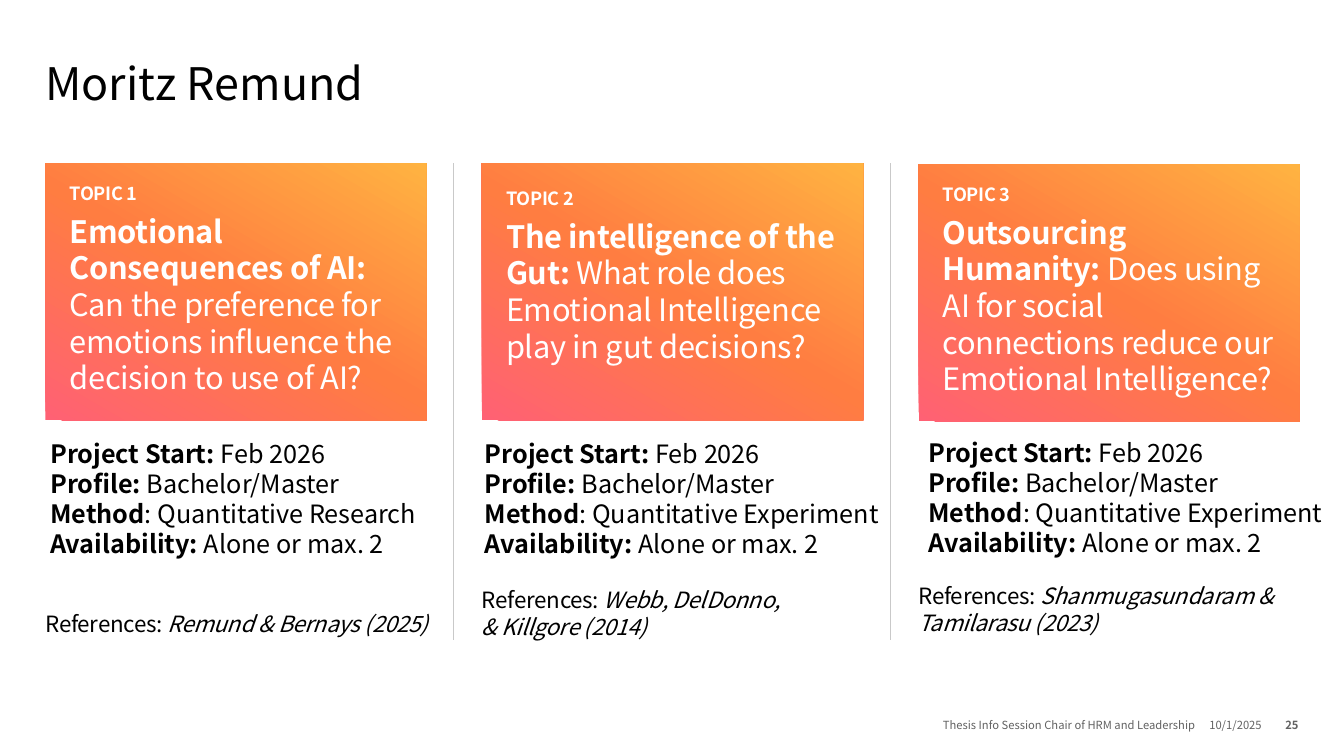
import copy
import pptx
import pptx.dml.color
import pptx.enum.shapes
import pptx.enum.text
import pptx.util
import lxml.etree

IN, PT = pptx.util.Inches, pptx.util.Pt
ALIGN, ANCHOR = pptx.enum.text.PP_ALIGN, pptx.enum.text.MSO_ANCHOR
FONT = "Noto Sans CJK KR"
WHITE, BLACK, GREY, RULE = "FFFFFF", "000000", "626262", "C9C9C9"
GRADIENT = [(0, "FF6174"), (0.5, "FF7D41"), (1, "FFB341")]

TITLE = "Moritz Remund"
FOOTER = [  # text, left, width, alignment, bold
    ("Thesis Info Session Chair of HRM and Leadership", 7.53, 4.33, ALIGN.RIGHT, False),
    ("10/1/2025", 11.94, 0.63, ALIGN.CENTER, False),
    ("25", 12.57, 0.31, ALIGN.RIGHT, True),
]
TOPICS = [
    {"name": "Emotional Consequences of AI: ",
     "question": "Can the preference for emotions influence the decision to use of AI?",
     "method": "Quantitative Research", "source": "Remund & Bernays (2025)",
     "anchor": ANCHOR.BOTTOM, "card_top": 1.62, "details_at": (0.4, 4.3), "source_top": 6.06},
    {"name": "The intelligence of the Gut: ",
     "question": "What role does Emotional Intelligence play in gut decisions?",
     "method": "Quantitative Experiment", "source": "Webb, DelDonno, \v& Killgore (2014)",
     "anchor": ANCHOR.TOP, "card_top": 1.62, "details_at": (4.71, 4.3), "source_top": 5.82},
    {"name": "Outsourcing Humanity: ",
     "question": "Does using AI for social connections reduce our Emotional Intelligence?",
     "method": "Quantitative Experiment", "source": "Shanmugasundaram & \vTamilarasu (2023)",
     "anchor": ANCHOR.BOTTOM, "card_top": 1.63, "details_at": (9.11, 4.29), "source_top": 5.78},
]

LEFT, PITCH, TOP = 0.45, 4.33, 1.62
CARD_W, CARD_H, CARD_PAD = 3.78, 2.55, 0.24
TEXT_W = 4.11
DIVIDER_SHIFT, DIVIDER_END = 4.05, 6.35
LINE_RATIO = 1.19


def rgb(value):
    return pptx.dml.color.RGBColor.from_string(value)


def write(sp, paragraphs, pads=(0, 0, 0, 0), anchor=ANCHOR.TOP, align=ALIGN.LEFT,
          color=BLACK, after=0, spacing=0, ratio=LINE_RATIO):
    """Fill sp with paragraphs, each a (size, [(text, font values), ...]) pair."""
    tf = sp.text_frame
    tf.word_wrap, tf.vertical_anchor = True, anchor
    for side, pad in zip(("left", "top", "right", "bottom"), pads):
        setattr(tf, "margin_" + side, IN(pad))
    for i, (size, runs) in enumerate(paragraphs):
        p = tf.add_paragraph() if i else tf.paragraphs[0]
        p.alignment, p.space_after = align, PT(after)
        p.line_spacing = PT(round(size * ratio, 1))
        for text, style in runs:
            for j, line in enumerate(text.split("\v")):
                if j:
                    p.add_line_break()
                r = p.add_run()
                r.text = line
                r.font.color.rgb = rgb(color)
                for key, value in {"name": FONT, "size": PT(size), **style}.items():
                    setattr(r.font, key, value)
                if spacing:
                    r.font._element.set("spc", str(round(spacing * 100)))


def add_text(slide, at, paragraphs, **layout):
    sp = slide.shapes.add_textbox(*map(IN, at))
    write(sp, paragraphs, **layout)


def add_card(slide, at):
    sp = slide.shapes.add_shape(pptx.enum.shapes.MSO_SHAPE.RECTANGLE, *map(IN, at))
    sp.shadow.inherit = False
    sp.line.fill.background()
    sp.fill.gradient()
    sp.fill.gradient_angle = 60
    stops = sp._element.spPr.find(".//" + pptx.oxml.ns.qn("a:gsLst"))
    stops.append(copy.deepcopy(stops[0]))
    for stop, (position, color) in zip(sp.fill.gradient_stops, GRADIENT):
        stop.position, stop.color.rgb = position, rgb(color)
    return sp


def add_divider(slide, x):
    line = slide.shapes.add_connector(pptx.enum.shapes.MSO_CONNECTOR.STRAIGHT,
                                      IN(x), IN(TOP), IN(x), IN(DIVIDER_END))
    line.line.color.rgb, line.line.width = rgb(RULE), PT(0.5)
    lxml.etree.SubElement(line._element.spPr, pptx.oxml.ns.qn("a:effectLst"))


def add_topic(slide, index, topic):
    x = LEFT + index * PITCH
    bold, plain = {"bold": True}, {"bold": False}
    card = add_card(slide, (x, topic["card_top"], CARD_W, CARD_H))
    write(card, [(13, [(f"TOPIC {index + 1}", bold)]),
                 (22, [(topic["name"], bold), (topic["question"], plain)])],
          pads=(CARD_PAD,) * 4, anchor=topic["anchor"], color=WHITE, after=6, spacing=-0.2)
    details = [("Project Start: ", "Feb 2026"), ("Profile: ", "Bachelor/Master"),
               ("Method", ": " + topic["method"]), ("Availability: ", "Alone or max. 2")]
    add_text(slide, (*topic["details_at"], TEXT_W, 1.31),
             [(18, [(label, bold), (value, plain)]) for label, value in details],
             pads=(0.1, 0.05, 0, 0.05))
    height = 0.27 * (1 + topic["source"].count("\v"))
    add_text(slide, (x, topic["source_top"], TEXT_W, height),
             [(16, [("References: ", {}), (topic["source"], {"italic": True})])], spacing=-0.2)


def main():
    prs = pptx.Presentation()
    prs.slide_width, prs.slide_height = IN(13.33), IN(7.5)
    slide = prs.slides.add_slide(prs.slide_layouts[6])
    for i in range(len(TOPICS) - 1):
        add_divider(slide, LEFT + DIVIDER_SHIFT + i * PITCH)
    add_text(slide, (LEFT, 0.52, 12.44, 0.63), [(32, [(TITLE, {})])], ratio=1.28)
    for i, topic in enumerate(TOPICS):
        add_topic(slide, i, topic)
    for text, x, width, align, bold in FOOTER:
        add_text(slide, (x, 7.06, width, 0.2), [(8, [(text, {"bold": bold})])],
                 anchor=ANCHOR.BOTTOM, align=align, color=GREY)
    prs.save("out.pptx")


if __name__ == "__main__":
    main()
